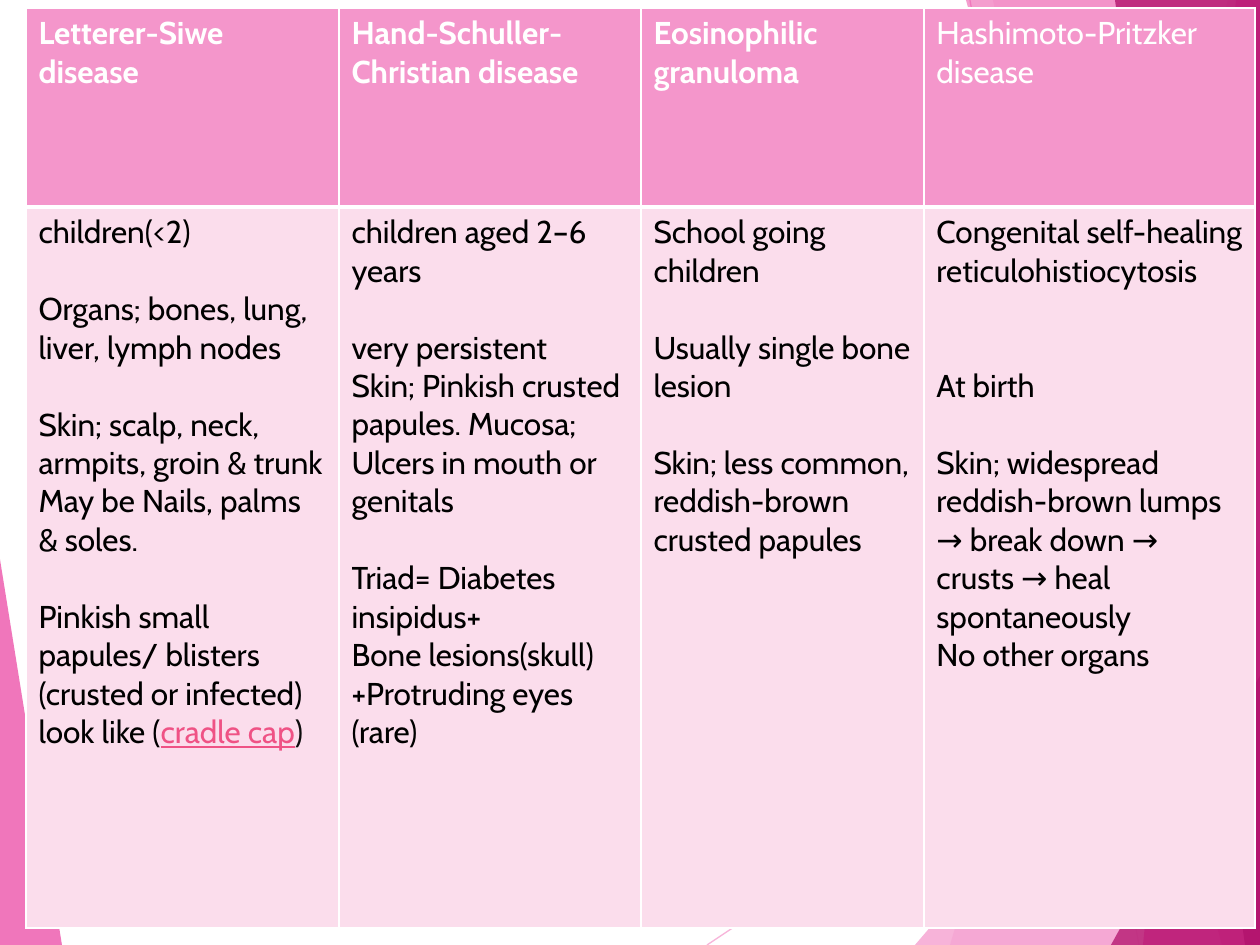
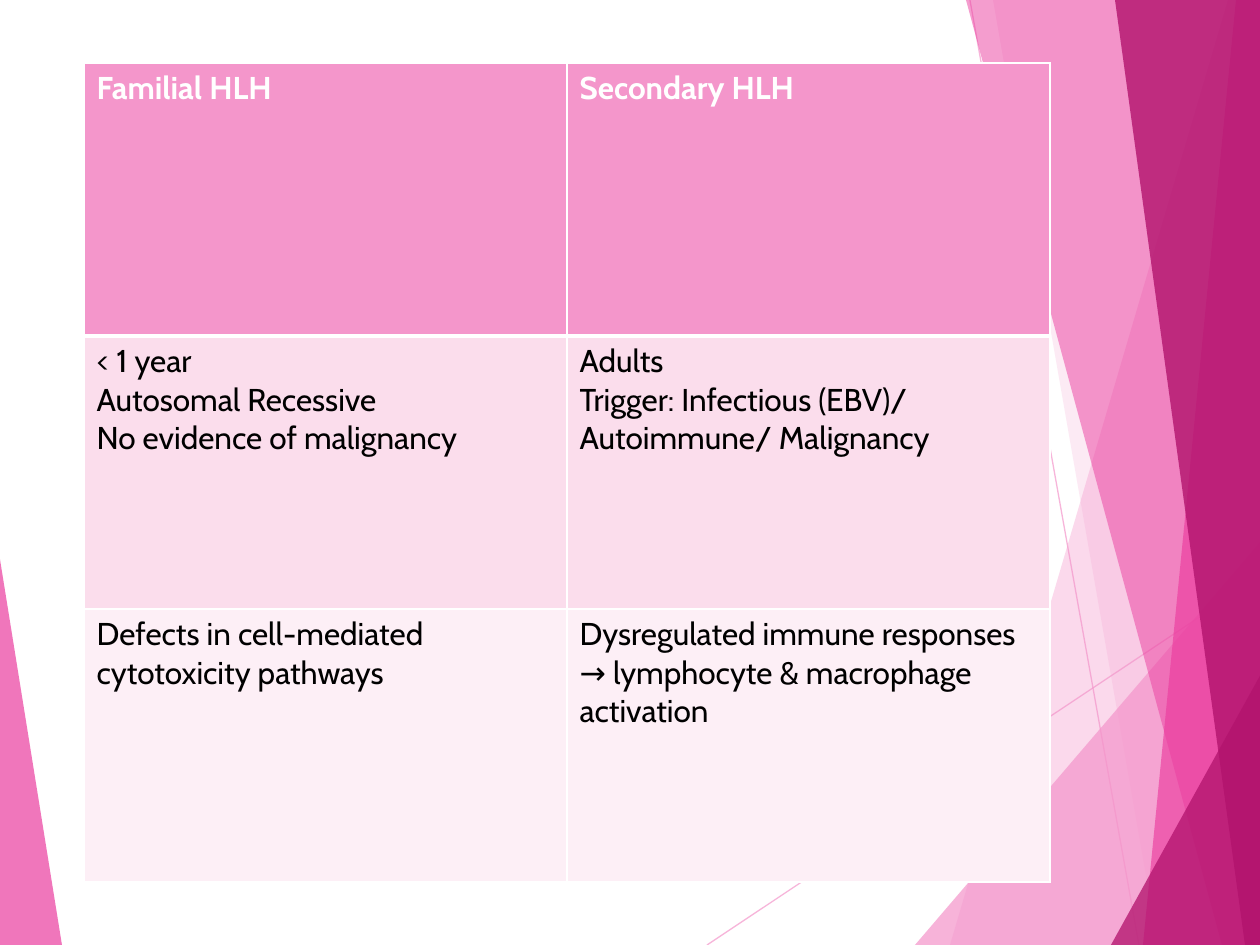
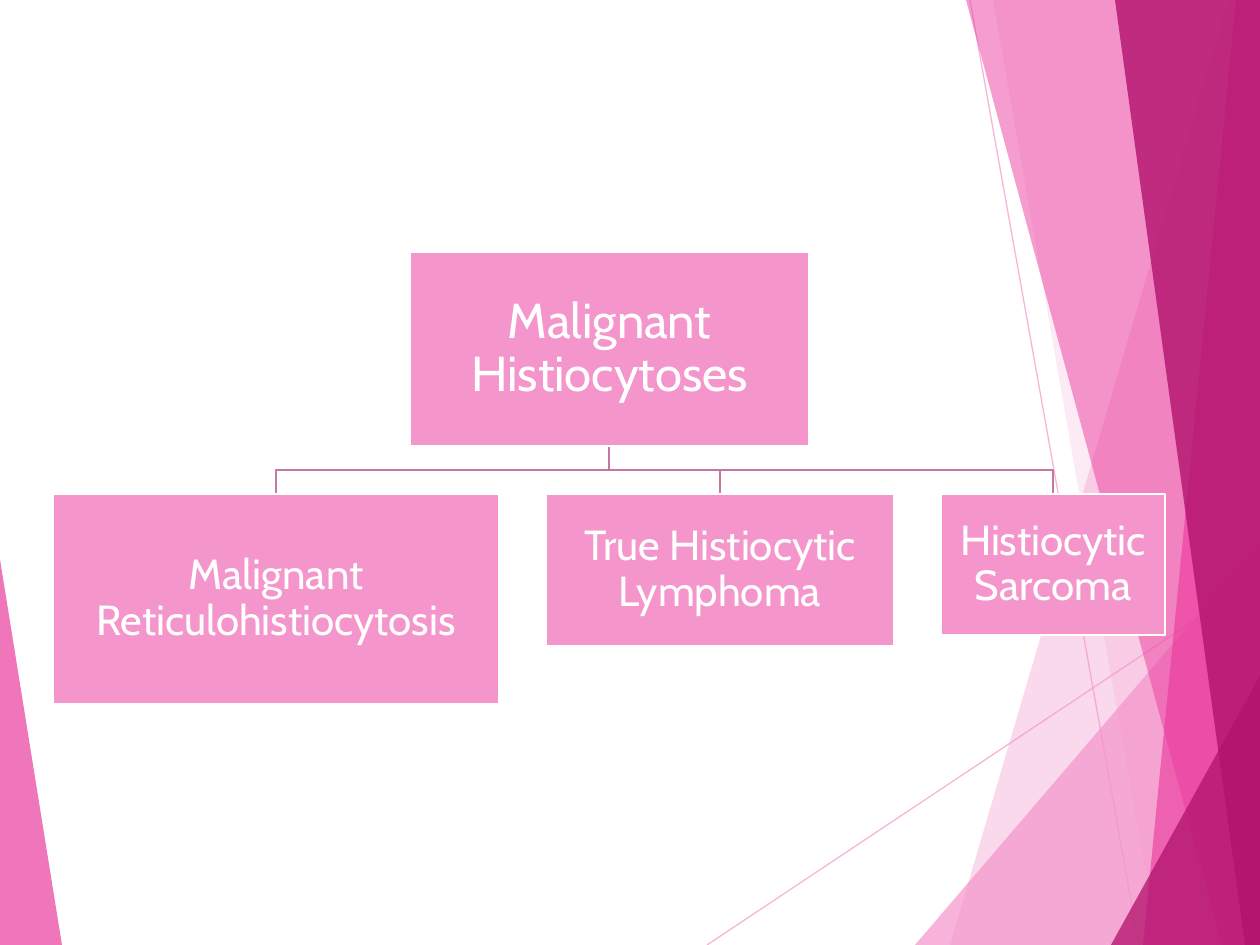
from dataclasses import dataclass
from typing import NamedTuple

from lxml.etree import SubElement
from pptx import Presentation
from pptx.dml.color import RGBColor
from pptx.enum.shapes import MSO_CONNECTOR as Connector, MSO_SHAPE as Preset
from pptx.enum.text import MSO_ANCHOR as Anchor, PP_ALIGN as Align
from pptx.oxml.ns import qn
from pptx.util import Emu, Pt

SCALE = 914400 / 126  # EMU in one px
WIDTH, HEIGHT = 1260, 945
EDGE = 1261  # right edge of the band, just past the slide


@dataclass(frozen=True)
class Theme:
    font: str = "Cabin"
    white: str = "FFFFFF"
    black: str = "000000"
    near_black: str = "0D0D0D"
    pink: str = "F496CB"
    magenta: str = "EB3D9F"
    plum: str = "B2136D"
    link: str = "EF5285"
    branch: str = "C378A3"
    row_tints: tuple[str, ...] = ("FBDDEC", "FDEFF6")
    table_size: int = 18
    blank_line: int = 22
    root_size: int = 28
    child_size: int = 24


THEME = Theme()


class Facet(NamedTuple):
    color: str
    opacity: int
    points: list[tuple[int, int]]


class Ray(NamedTuple):
    start: tuple[int, int]
    end: tuple[int, int]


class Line(NamedTuple):
    text: str
    gap: int = 0  # empty lines above
    link: str = ""
    tail: str = ""


class Head(NamedTuple):
    text: str
    bold: bool = True


class Grid(NamedTuple):
    left: int
    top: int
    columns: list[int]
    rows: list[int]
    heads: list[Head]
    body: list[list[list[Line]]]


class Node(NamedTuple):
    text: str
    left: int
    top: int
    width: int
    height: int
    size: int = THEME.child_size

    @property
    def middle(self) -> int:
        return self.left + self.width // 2


# Shared background
RAYS = [Ray((707, HEIGHT), (EDGE, 576)), Ray((970, 0), (1139, HEIGHT))]
FACETS = [
    Facet(THEME.pink, 36, [(1228, 0), (950, HEIGHT), (EDGE, HEIGHT), (EDGE, 0)]),
    Facet(THEME.pink, 20, [(993, 0), (1158, HEIGHT), (EDGE, HEIGHT), (EDGE, 0)]),
    Facet(THEME.pink, 72, [(915, HEIGHT), (EDGE, 541), (EDGE, HEIGHT)]),
    Facet(THEME.magenta, 50, [(966, 0), (1222, HEIGHT), (EDGE, HEIGHT), (EDGE, 0)]),
    Facet(THEME.magenta, 66, [(1236, 0), (1143, HEIGHT), (EDGE, HEIGHT), (EDGE, 0)]),
    Facet(THEME.plum, 80, [(1115, 0), (1245, HEIGHT), (EDGE, HEIGHT), (EDGE, 0)]),
    Facet(THEME.plum, 76, [(1111, HEIGHT), (EDGE, 674), (EDGE, HEIGHT)]),
    Facet(THEME.magenta, 70, [(-1, 553), (62, HEIGHT), (-1, HEIGHT)]),
]

# Slide contents
LANGERHANS = Grid(
    26, 8, [313, 302, 283, 331], [199, 721],
    [Head("Letterer-Siwe disease"), Head("Hand-Schuller-Christian disease"),
     Head("Eosinophilic granuloma"), Head("Hashimoto-Pritzker disease", bold=False)],
    [[
        [Line("children(<2)"),
         Line("Organs; bones, lung, liver, lymph nodes", 1),
         Line("Skin; scalp, neck, armpits, groin & trunk", 1),
         Line("May be Nails, palms & soles."),
         Line("Pinkish small papules/ blisters (crusted or infected)", 1),
         Line("look like (", link="cradle cap", tail=")")],
        [Line("children aged 2–6 years"),
         Line("very persistent", 1),
         Line("Skin; Pinkish crusted papules. Mucosa; Ulcers in mouth or genitals"),
         Line("Triad= Diabetes insipidus+", 1),
         Line("Bone lesions(skull) +Protruding eyes (rare)")],
        [Line("School going children"),
         Line("Usually single bone lesion", 1),
         Line("Skin; less common,", 1),
         Line("reddish-brown crusted papules")],
        [Line("Congenital self-healing reticulohistiocytosis"),
         Line("At birth", 2),
         Line("Skin; widespread reddish-brown lumps → break down → crusts → heal "
              "spontaneously", 1),
         Line("No other organs")],
    ]],
)
HLH = Grid(
    84, 63, [483] * 2, [273] * 3,
    [Head("Familial HLH"), Head("Secondary HLH")],
    [
        [[Line("< 1 year"), Line("Autosomal Recessive"),
          Line("No evidence of malignancy")],
         [Line("Adults"), Line("Trigger: Infectious (EBV)/ Autoimmune/ Malignancy")]],
        [[Line("Defects in cell-mediated cytotoxicity pathways")],
         [Line("Dysregulated immune responses → lymphocyte & macrophage activation")]],
    ],
)
ROOT = Node("Malignant Histiocytoses", 410, 252, 399, 194, THEME.root_size)
CHILDREN = [
    Node("Malignant Reticulohistiocytosis", 53, 494, 446, 210),
    Node("True Histiocytic Lymphoma", 546, 494, 348, 152),
    Node("Histiocytic Sarcoma", 941, 494, 224, 141),
]


def px(length: int) -> Emu:
    return Emu(round(length * SCALE))


def rgb(color: str) -> RGBColor:
    return RGBColor.from_string(color)


def fill(target, color: str) -> None:
    target.fill.solid()
    target.fill.fore_color.rgb = rgb(color)


def stroke(line, color: str, width: float) -> None:
    line.color.rgb = rgb(color)
    line.width = Pt(width)


def set_opacity(shape, percent: int) -> None:
    for color in shape.element.spPr.iter(qn("a:srgbClr")):
        SubElement(color, qn("a:alpha"), val=str(percent * 1000))


def write(para, text: str, *, size: int = THEME.table_size, color: str = THEME.black,
          bold: bool = False, underline: bool = False) -> None:
    span = para.add_run()
    span.text = text
    span.font.name = THEME.font
    span.font.size = Pt(size)
    span.font.bold = bold
    span.font.underline = underline
    span.font.color.rgb = rgb(color)


def add_outline(page, points: list[tuple[int, int]], close: bool):
    builder = page.shapes.build_freeform(*points[0], scale=SCALE)
    builder.add_line_segments(points[1:], close=close)
    shape = builder.convert_to_shape()
    shape.shadow.inherit = False
    return shape


def add_ray(page, ray: Ray):
    line = page.shapes.add_connector(
        Connector.STRAIGHT, *map(px, ray.start), *map(px, ray.end))
    stroke(line.line, THEME.pink, 0.75)
    SubElement(line.element.spPr, qn("a:effectLst"))
    set_opacity(line, 70)
    return line


def add_facet(page, facet: Facet):
    shape = add_outline(page, facet.points, close=True)
    fill(shape, facet.color)
    shape.line.fill.background()
    set_opacity(shape, facet.opacity)
    return shape


def dress_layout(layout, page) -> None:
    """Draw the background on a page, then hand it to the layout all pages share."""
    for placeholder in list(layout.placeholders):
        layout.shapes.element.remove(placeholder.element)
    parts = [add_ray(page, ray) for ray in RAYS]
    parts += [add_facet(page, facet) for facet in FACETS]
    for part in parts:
        layout.shapes.element.append(part.element)


def set_borders(cell, top: int, bottom: int) -> None:
    properties = cell._tc.get_or_add_tcPr()
    for side, width in {"L": 1, "R": 1, "T": top, "B": bottom}.items():
        border = SubElement(properties, qn(f"a:ln{side}"), w=str(Pt(width)))
        paint = SubElement(border, qn("a:solidFill"))
        SubElement(paint, qn("a:srgbClr"), val=THEME.white)


def write_lines(frame, lines: list[Line]) -> None:
    for index, line in enumerate(lines):
        para = frame.add_paragraph() if index else frame.paragraphs[0]
        if line.gap:
            para.space_before = Pt(line.gap * THEME.blank_line)
        write(para, line.text)
        if line.link:
            write(para, line.link, color=THEME.link, underline=True)
            write(para, line.tail, color=THEME.near_black)


def add_grid(page, grid: Grid) -> None:
    table = page.shapes.add_table(
        len(grid.rows), len(grid.columns), px(grid.left), px(grid.top),
        px(sum(grid.columns)), px(sum(grid.rows))).table
    for column, width in zip(table.columns, grid.columns):
        column.width = px(width)
    for row, height in zip(table.rows, grid.rows):
        row.height = px(height)
    # Header row
    for index, head in enumerate(grid.heads):
        cell = table.cell(0, index)
        set_borders(cell, top=1, bottom=3)
        fill(cell, THEME.pink)
        write(cell.text_frame.paragraphs[0], head.text, color=THEME.white, bold=head.bold)
    # Body rows
    for row_index, row in enumerate(grid.body):
        for index, lines in enumerate(row):
            cell = table.cell(row_index + 1, index)
            set_borders(cell, top=1 if row_index else 3, bottom=1)
            fill(cell, THEME.row_tints[row_index % 2])
            write_lines(cell.text_frame, lines)


def add_branch(page, parent: Node, child: Node) -> None:
    start = parent.top + parent.height
    bend = (start + child.top) // 2
    branch = add_outline(page, [(parent.middle, start), (parent.middle, bend),
                                (child.middle, bend), (child.middle, child.top)],
                         close=False)
    branch.fill.background()
    stroke(branch.line, THEME.branch, 1.5)


def add_node(page, node: Node) -> None:
    box = page.shapes.add_shape(Preset.RECTANGLE, px(node.left), px(node.top),
                                px(node.width), px(node.height))
    box.shadow.inherit = False
    fill(box, THEME.pink)
    stroke(box.line, THEME.white, 1.5)
    frame = box.text_frame
    frame.word_wrap = True
    frame.vertical_anchor = Anchor.MIDDLE
    frame.margin_left = frame.margin_right = px(2)
    frame.margin_top = frame.margin_bottom = px(2)
    para = frame.paragraphs[0]
    para.alignment = Align.CENTER
    para.line_spacing = 0.9
    write(para, node.text, size=node.size, color=THEME.white)


def main() -> None:
    deck = Presentation()
    deck.slide_width, deck.slide_height = px(WIDTH), px(HEIGHT)
    layout = deck.slide_layouts[6]
    langerhans_page, hlh_page, malignant_page = [
        deck.slides.add_slide(layout) for _ in range(3)]
    dress_layout(layout, langerhans_page)

    # Tables
    add_grid(langerhans_page, LANGERHANS)
    add_grid(hlh_page, HLH)

    # Hierarchy: branches lie behind the boxes
    for child in reversed(CHILDREN):
        add_branch(malignant_page, ROOT, child)
    for node in [ROOT, *CHILDREN]:
        add_node(malignant_page, node)

    deck.save("out.pptx")


if __name__ == "__main__":
    main()
